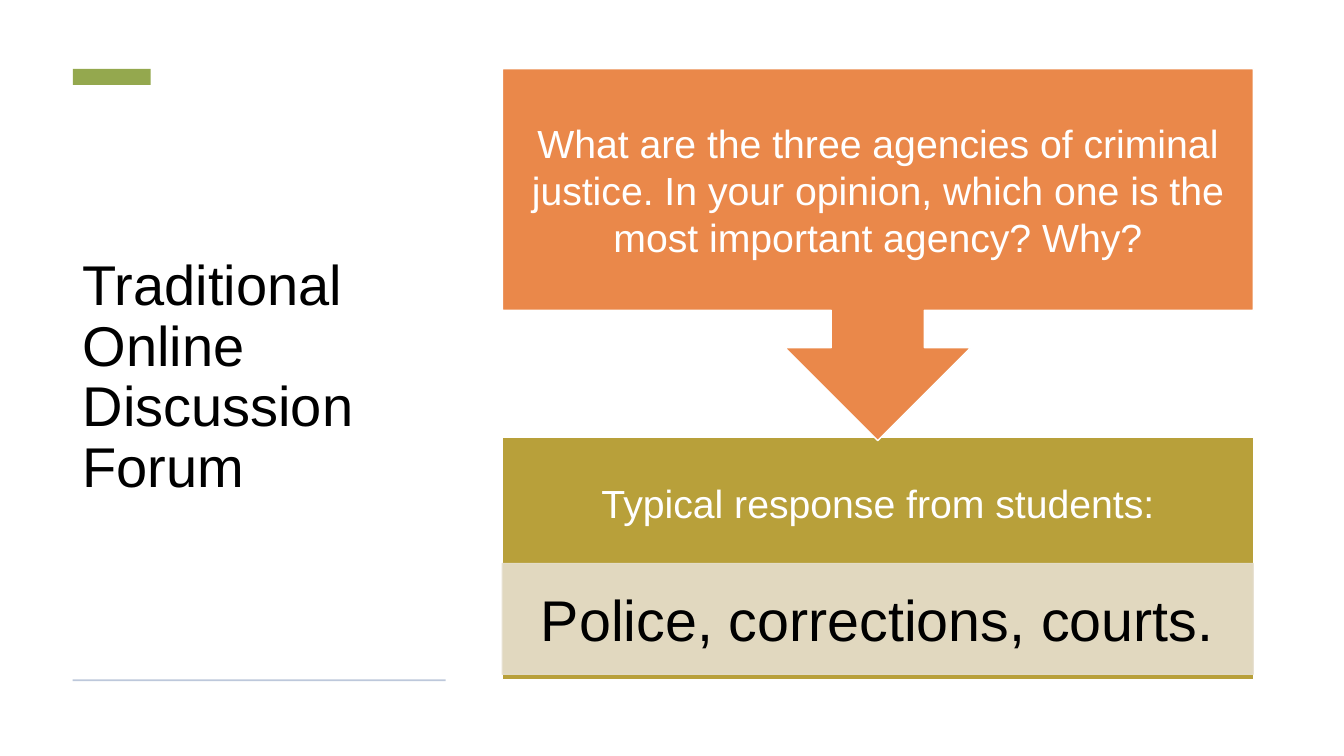
from lxml import etree
from pptx import Presentation
from pptx.dml.color import RGBColor
from pptx.enum import shapes, text
from pptx.oxml import ns
from pptx.util import Pt

COLORS = {
    "white": "FFFFFF", "black": "000000", "green": "94A84E", "rule": "BDC8DB",
    "olive": "B8A03A", "sand": "E6DFCE", "orange": "EA884A",
}
KIND = shapes.MSO_SHAPE
COLUMN_LEFT, COLUMN_WIDTH = 358.8, 536.4
SIDE_LEFT, SIDE_WIDTH = 52, 266.4

deck = Presentation()
deck.slide_width, deck.slide_height = Pt(960), Pt(540)
page = deck.slides.add_slide(deck.slide_layouts[6])


def add_block(kind, bounds, fill, line=None):
    block = page.shapes.add_shape(kind, *map(Pt, bounds))
    block.shadow.inherit = False
    block.fill.solid()
    block.fill.fore_color.rgb = RGBColor.from_string(COLORS[fill])
    if line:
        block.line.color.rgb = RGBColor.from_string(COLORS[line])
        block.line.width = Pt(1)
    else:
        block.line.fill.background()
    return block


def write(box, words, size, color, align, insets):
    """Fill a box with one paragraph; insets are left, top, right, bottom."""
    frame = box.text_frame
    margins = zip(("left", "top", "right", "bottom"), insets)
    formats = {f"margin_{side}": Pt(inset) for side, inset in margins}
    formats |= {"word_wrap": True, "vertical_anchor": text.MSO_ANCHOR.MIDDLE}
    for name, value in formats.items():
        setattr(frame, name, value)
    para = frame.paragraphs[0]
    para.alignment = align
    span = para.add_run()
    span.text = words
    for name, value in {"name": "Arial", "size": Pt(size)}.items():
        setattr(span.font, name, value)
    span.font.color.rgb = RGBColor.from_string(COLORS[color])
    return para


# Title column
title = page.shapes.add_textbox(Pt(SIDE_LEFT), Pt(75.6), Pt(SIDE_WIDTH), Pt(389.5))
title_para = write(title, "Traditional Online Discussion Forum", 40, "black",
                   text.PP_ALIGN.LEFT, (7.2, 3.6, 7.2, 3.6))
title_para.line_spacing = 0.9
add_block(KIND.RECTANGLE, (SIDE_LEFT, 49.2, 55.6, 11.5), "green")
add_block(KIND.RECTANGLE, (SIDE_LEFT, 485.2, SIDE_WIDTH, 1.4), "rule")

# Question and response column
response = add_block(KIND.RECTANGLE, (COLUMN_LEFT, 312.5, COLUMN_WIDTH, 172.8),
                     "olive", "white")
answer = add_block(KIND.RECTANGLE, (COLUMN_LEFT, 402.5, COLUMN_WIDTH, 79.2),
                   "sand", "sand")
for color in answer.element.spPr.iter(ns.qn("a:srgbClr")):
    etree.SubElement(color, ns.qn("a:alpha"), val="90000")
question = add_block(KIND.DOWN_ARROW_CALLOUT, (COLUMN_LEFT, 49, COLUMN_WIDTH, 265.7),
                     "orange", "white")

for box, words, size, color, insets in (
    (response, "Typical response from students:", 28, "white", (15.8, 15.8, 15.8, 95)),
    (answer, "Police, corrections, courts.", 41, "black", (23, 4.3, 23, 4.3)),
    (question, "What are the three agencies of criminal justice. In your opinion, "
     "which one is the most important agency? Why?", 28, "white", (15.8,) * 4),
):
    write(box, words, size, color, text.PP_ALIGN.CENTER, insets)

deck.save("out.pptx")
